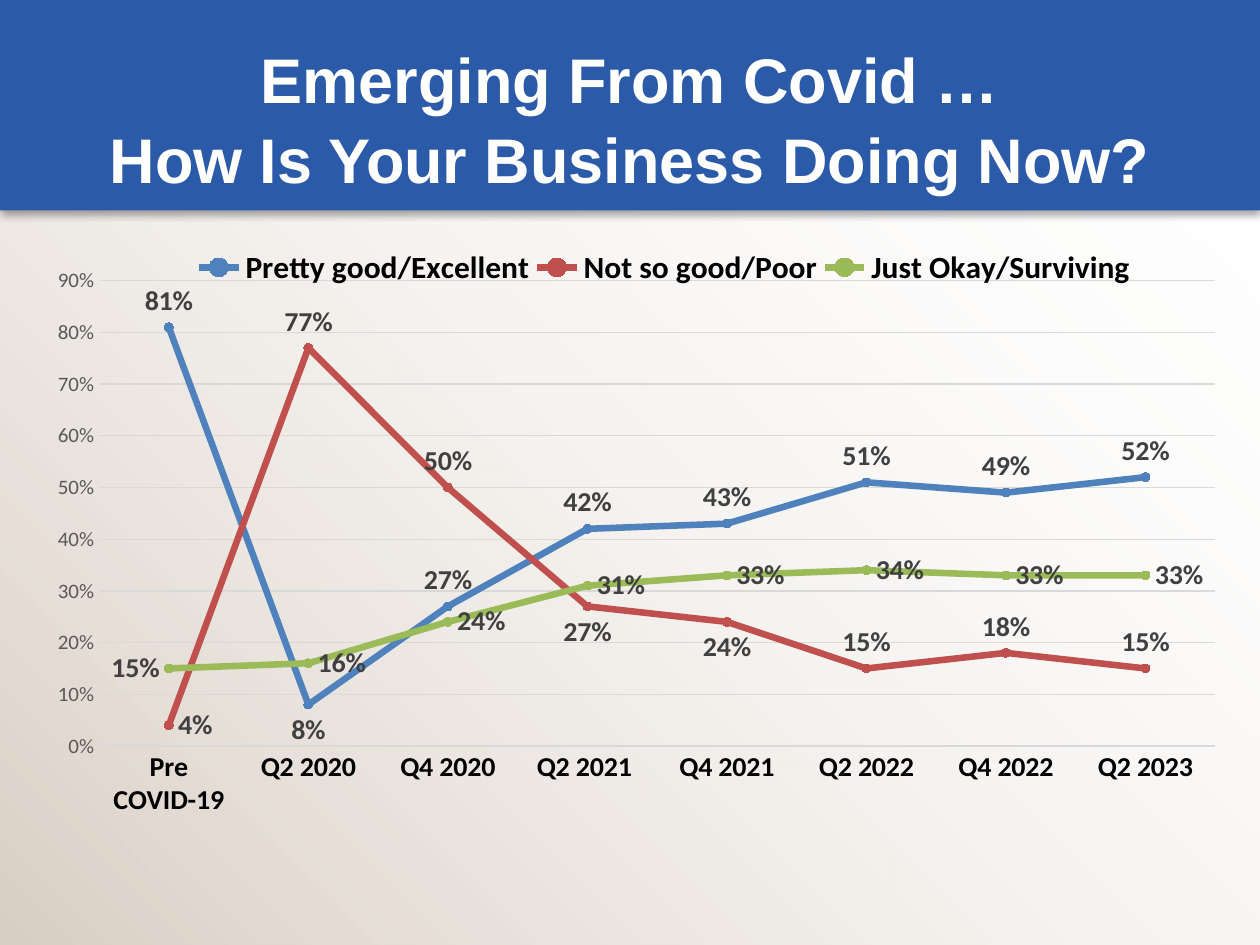
from lxml.etree import SubElement
from pptx import Presentation
from pptx.chart.data import CategoryChartData
from pptx.dml.color import RGBColor
from pptx.enum.chart import (XL_CHART_TYPE, XL_LABEL_POSITION, XL_LEGEND_POSITION,
                             XL_MARKER_STYLE, XL_TICK_MARK)
from pptx.enum.shapes import MSO_SHAPE
from pptx.enum.text import MSO_ANCHOR, PP_ALIGN
from pptx.oxml import parse_xml
from pptx.oxml.ns import nsdecls, qn
from pptx.util import Inches, Pt

COLORS = {
    "sand": "DACFC4", "white": "FFFFFF", "banner": "2B5AA9", "black": "000000",
    "axis": "595959", "label": "404040", "grid": "D9D9D9",
    "good": "4F81BD", "poor": "C0504D", "okay": "9BBB59",
}
POS = XL_LABEL_POSITION
QUARTERS = ["Pre COVID-19", "Q2 2020", "Q4 2020", "Q2 2021 ", "Q4 2021",
            "Q2 2022", "Q4 2022", "Q2 2023"]
SERIES = [
    ("Pretty good/Excellent", "good", [0.81, 0.08, 0.27, 0.42, 0.43, 0.51, 0.49, 0.52],
     POS.ABOVE, {1: POS.BELOW}),
    ("Not so good/Poor", "poor", [0.04, 0.77, 0.5, 0.27, 0.24, 0.15, 0.18, 0.15],
     POS.ABOVE, {0: POS.RIGHT, 3: POS.BELOW, 4: POS.BELOW}),
    ("Just Okay/Surviving", "okay", [0.15, 0.16, 0.24, 0.31, 0.33, 0.34, 0.33, 0.33],
     POS.RIGHT, {0: POS.LEFT}),
]


def rgb(name):
    return RGBColor.from_string(COLORS[name])


def style_font(font, size, color, bold=False, name="Calibri"):
    font.name, font.size, font.bold = name, Pt(size), bold
    font.color.rgb = rgb(color)


def style_line(line, color, width):
    line.color.rgb = rgb(color)
    line.width = Pt(width)


def add_rect(s, height):
    sp = s.shapes.add_shape(MSO_SHAPE.RECTANGLE, 0, 0, Inches(10), Inches(height))
    sp.shadow.inherit = False
    sp.line.fill.background()
    return sp


def add_backdrop(s):
    sp = add_rect(s, 7.5)
    sp.fill.gradient()
    sp.fill.gradient_angle = 45
    for stop, color, position in zip(sp.fill.gradient_stops, ("sand", "white"), (0, 1)):
        stop.color.rgb = rgb(color)
        stop.position = position
    last_color = sp._element.spPr.findall(".//" + qn("a:srgbClr"))[-1]
    SubElement(last_color, qn("a:alpha"), val="0")


def add_banner(s):
    sp = add_rect(s, 1.67)
    sp.fill.solid()
    sp.fill.fore_color.rgb = rgb("banner")
    effects = sp._element.spPr.find(qn("a:effectLst"))
    shadow = SubElement(effects, qn("a:outerShdw"), blurRad=str(Pt(4)), dist=str(Pt(2.2)),
                        dir="5400000", algn="t", rotWithShape="0")
    color = SubElement(shadow, qn("a:srgbClr"), val=COLORS["black"])
    SubElement(color, qn("a:alpha"), val="32000")


def add_title(s, text):
    tf = s.shapes.add_textbox(Inches(0.5), Inches(0.3), Inches(9), Inches(1.25)).text_frame
    tf.word_wrap = True
    tf.vertical_anchor = MSO_ANCHOR.MIDDLE
    tf.margin_left = tf.margin_right = tf.margin_top = tf.margin_bottom = Inches(0.05)
    tf.text = text
    p = tf.paragraphs[0]
    p.alignment = PP_ALIGN.CENTER
    p.line_spacing = 1.05
    for r in p.runs:
        style_font(r.font, 36, "white", True, "Arial")


def layout_xml(x, y, w, h, target=""):
    return parse_xml(
        f'<c:layout {nsdecls("c")}><c:manualLayout>{target}'
        '<c:xMode val="edge"/><c:yMode val="edge"/>'
        f'<c:x val="{x}"/><c:y val="{y}"/><c:w val="{w}"/><c:h val="{h}"/>'
        '</c:manualLayout></c:layout>')


def place_plot(chart):
    plot_area = chart._chartSpace.chart.plotArea
    for old in plot_area.findall(qn("c:layout")):
        plot_area.remove(old)
    inner = '<c:layoutTarget val="inner"/>'
    plot_area.insert(0, layout_xml(0.064, 0.069, 0.92, 0.825, inner))


def style_legend(chart):
    chart.has_legend = True
    legend = chart.legend
    legend.position = XL_LEGEND_POSITION.BOTTOM
    legend.include_in_layout = False
    style_font(legend.font, 18, "black", True)
    element = legend._element
    for old in element.findall(qn("c:layout")):
        element.remove(old)
    element.find(qn("c:legendPos")).addnext(layout_xml(0.14, 0.01, 0.78, 0.07))


def style_axes(chart):
    cat, val = chart.category_axis, chart.value_axis
    for axis in (cat, val):
        axis.major_tick_mark = axis.minor_tick_mark = XL_TICK_MARK.NONE
    style_font(cat.tick_labels.font, 16, "black", True)
    style_line(cat.format.line, "grid", 0.75)
    style_font(val.tick_labels.font, 12, "axis")
    val.tick_labels.number_format = "0%"
    val.tick_labels.number_format_is_linked = False
    val.minimum_scale, val.maximum_scale, val.major_unit = 0, 0.9, 0.1
    val.format.line.fill.background()
    style_line(val.major_gridlines.format.line, "grid", 0.75)


def style_series(series, color, position, exceptions):
    series.smooth = False
    style_line(series.format.line, color, 3.75)
    marker = series.marker
    marker.style, marker.size = XL_MARKER_STYLE.CIRCLE, 5
    marker.format.fill.solid()
    marker.format.fill.fore_color.rgb = rgb(color)
    style_line(marker.format.line, color, 0.75)
    labels = series.data_labels
    labels.show_value = True
    labels.number_format, labels.number_format_is_linked = "0%", False
    labels.position = position
    style_font(labels.font, 16, "label", True)
    for index, point_position in exceptions.items():
        label = series.points[index].data_label
        style_font(label.font, 16, "label", True)
        label.position = point_position


def add_line_chart(s):
    data = CategoryChartData(number_format="0%")
    data.categories = QUARTERS
    for name, _, values, _, _ in SERIES:
        data.add_series(name, values)
    chart = s.shapes.add_chart(XL_CHART_TYPE.LINE_MARKERS, Inches(0.17), Inches(1.92),
                               Inches(9.63), Inches(4.57), data).chart
    chart.has_title = False
    style_font(chart.font, 10, "black")
    chart.plots[0].vary_by_categories = False
    style_axes(chart)
    for series, (_, color, _, position, exceptions) in zip(chart.plots[0].series, SERIES):
        style_series(series, color, position, exceptions)
    style_legend(chart)
    place_plot(chart)


def main():
    prs = Presentation()
    prs.slide_width, prs.slide_height = Inches(10), Inches(7.5)
    s = prs.slides.add_slide(prs.slide_layouts[6])
    add_backdrop(s)
    add_banner(s)
    add_title(s, "Emerging From Covid …\vHow Is Your Business Doing Now?")
    add_line_chart(s)
    prs.save("out.pptx")


if __name__ == "__main__":
    main()
